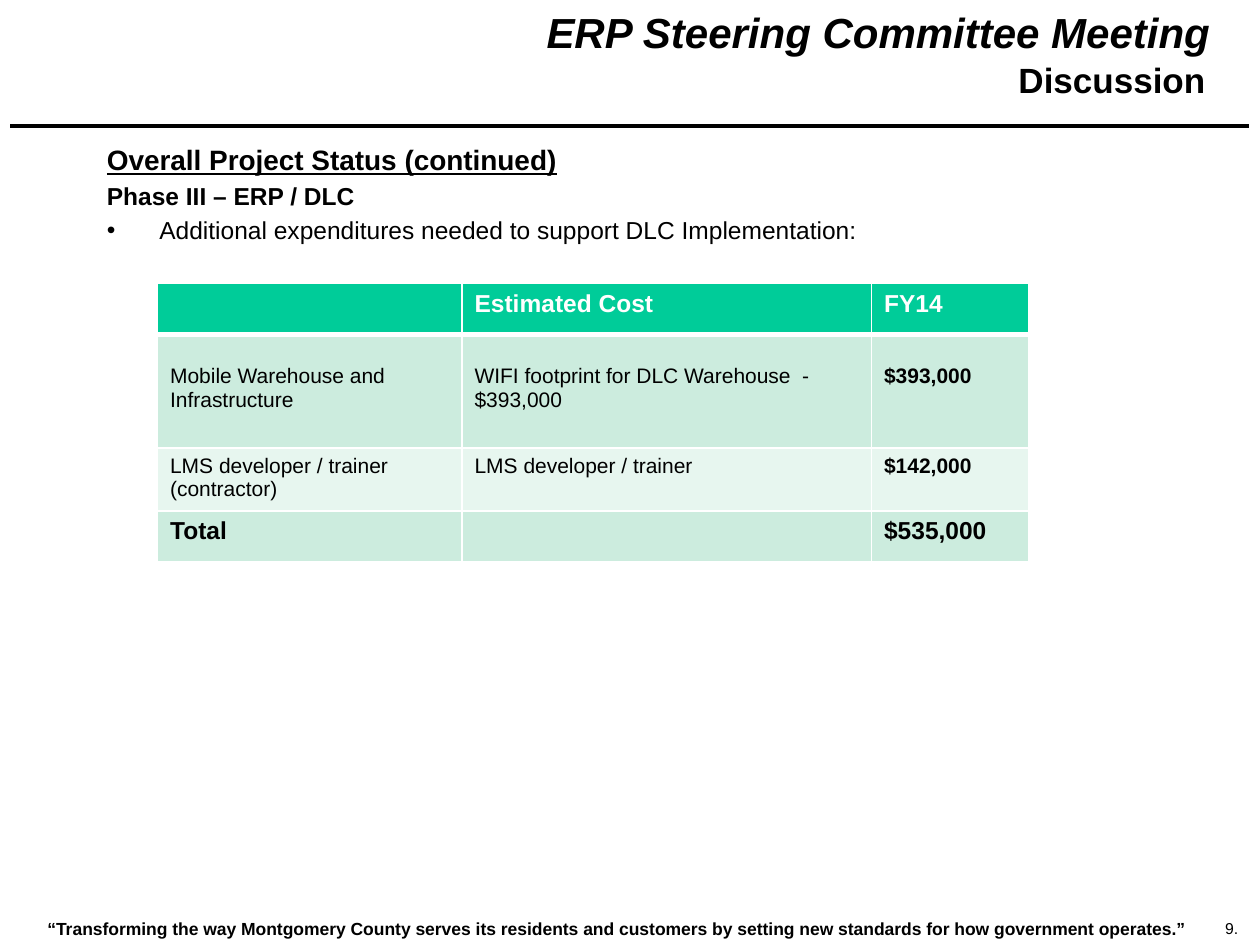
from dataclasses import dataclass

import pptx
import pptx.dml.color
import pptx.enum.shapes
import pptx.enum.text
import pptx.oxml
import pptx.oxml.ns
import pptx.util
from lxml import etree

Pt = pptx.util.Pt
RGBColor = pptx.dml.color.RGBColor
Align = pptx.enum.text.PP_ALIGN
qn = pptx.oxml.ns.qn

BLACK = RGBColor(0x00, 0x00, 0x00)
WHITE = RGBColor(0xFF, 0xFF, 0xFF)
GREEN = RGBColor(0x00, 0xCC, 0x99)
MINT = RGBColor(0xCC, 0xEC, 0xDE)
PALE_MINT = RGBColor(0xE7, 0xF6, 0xEF)
FONT = "Arial"
INDENT = 30


@dataclass
class Line:
    text: str
    size: float
    bold: bool = False
    italic: bool = False
    underline: bool = False
    bullet: bool = False
    color: RGBColor = BLACK


@dataclass
class Box:
    left: float
    top: float
    width: float
    height: float
    lines: list[Line]
    align: Align = Align.LEFT
    wrap: bool = True
    hanging: bool = False


@dataclass
class Row:
    height: float
    fill: RGBColor
    cells: list[Line]
    margin_top: float = 3.6
    border_bottom: float = 1


def add_line_text(paragraph, line: Line) -> None:
    run = paragraph.add_run()
    run.text = line.text
    font = run.font
    font.name, font.size = FONT, Pt(line.size)
    font.bold, font.italic, font.underline = line.bold, line.italic, line.underline
    font.color.rgb = line.color


def add_box(slide, box: Box) -> None:
    shape = slide.shapes.add_textbox(Pt(box.left), Pt(box.top), Pt(box.width), Pt(box.height))
    frame = shape.text_frame
    frame.word_wrap = box.wrap
    for index, line in enumerate(box.lines):
        paragraph = frame.paragraphs[0] if index == 0 else frame.add_paragraph()
        paragraph.alignment = box.align
        if index:
            paragraph.space_before = Pt(2.8)
        if box.hanging:
            properties = paragraph._p.get_or_add_pPr()
            properties.set("marL", str(Pt(INDENT)))
            properties.set("indent", str(-Pt(INDENT)))
            if line.bullet:
                etree.SubElement(properties, qn("a:buFont")).set("typeface", FONT)
                etree.SubElement(properties, qn("a:buChar")).set("char", "•")
        add_line_text(paragraph, line)


def add_rule(slide, left: float, right: float, y: float) -> None:
    connector = slide.shapes.add_connector(
        pptx.enum.shapes.MSO_CONNECTOR.STRAIGHT, Pt(left), Pt(y), Pt(right), Pt(y))
    connector.line.color.rgb = BLACK
    connector.line.width = Pt(2)
    etree.SubElement(connector._element.spPr, qn("a:effectLst"))


def set_borders(cell, top: float, bottom: float) -> None:
    properties = cell._tc.get_or_add_tcPr()
    widths = {"lnL": 1, "lnR": 1, "lnT": top, "lnB": bottom}
    for position, (side, width) in enumerate(widths.items()):
        border = etree.Element(qn(f"a:{side}"), w=str(Pt(width)))
        fill = etree.SubElement(border, qn("a:solidFill"))
        etree.SubElement(fill, qn("a:srgbClr")).set("val", str(WHITE))
        properties.insert(position, border)


def add_cost_table(slide, left: float, top: float, widths: list[float], rows: list[Row]) -> None:
    table = slide.shapes.add_table(
        len(rows), len(widths), Pt(left), Pt(top),
        Pt(sum(widths)), Pt(sum(row.height for row in rows))).table
    table.first_row = table.horz_banding = False
    for column, width in zip(table.columns, widths):
        column.width = Pt(width)
    border_top = 1
    for row_index, row in enumerate(rows):
        table.rows[row_index].height = Pt(row.height)
        for column_index, line in enumerate(row.cells):
            cell = table.cell(row_index, column_index)
            cell.fill.solid()
            cell.fill.fore_color.rgb = row.fill
            cell.margin_top = Pt(row.margin_top)
            set_borders(cell, border_top, row.border_bottom)
            if line.text:
                add_line_text(cell.text_frame.paragraphs[0], line)
        border_top = row.border_bottom


EMPTY = Line("", 14)

BOXES = [
    # Title and subtitle
    Box(204, 0, 494.5, 36, [Line("ERP Steering Committee Meeting", 24, bold=True, italic=True)],
        Align.RIGHT),
    Box(90, 30, 606, 31, [Line("Discussion", 20, bold=True)], Align.RIGHT),
    # Status text
    Box(54, 78, 642, 432, [
        Line("Overall Project Status (continued)", 16, bold=True, underline=True),
        Line("Phase III – ERP / DLC", 14, bold=True),
        Line("Additional expenditures needed to support DLC Implementation:", 14, bullet=True),
    ], hanging=True),
    # Footer and page number
    Box(20, 521, 720, 19.5, [Line(
        "“Transforming the way Montgomery County serves its residents and customers "
        "by setting new standards for how government operates.”", 10, bold=True)]),
    Box(693, 521.5, 28, 18, [Line("9.", 9)], wrap=False),
]

COST_ROWS = [
    Row(29, GREEN, [EMPTY, Line("Estimated Cost", 14, bold=True, color=WHITE),
                    Line("FY14", 14, bold=True, color=WHITE)], border_bottom=3),
    Row(65, MINT, [Line("Mobile Warehouse and Infrastructure", 12),
                   Line("WIFI footprint for DLC Warehouse  - $393,000", 12),
                   Line("$393,000", 12, bold=True)], margin_top=17.4),
    Row(36, PALE_MINT, [Line("LMS developer / trainer (contractor)", 12),
                        Line("LMS developer / trainer", 12),
                        Line("$142,000", 12, bold=True)]),
    Row(29, MINT, [Line("Total", 14, bold=True), EMPTY, Line("$535,000", 14, bold=True)]),
]


def main() -> None:
    presentation = pptx.Presentation()
    presentation.slide_width, presentation.slide_height = Pt(720), Pt(540)
    slide = presentation.slides.add_slide(presentation.slide_layouts[6])
    add_rule(slide, 6, 714, 72)
    for box in BOXES:
        add_box(slide, box)
    add_cost_table(slide, 90, 162, [174, 234, 90], COST_ROWS)
    presentation.save("out.pptx")


if __name__ == "__main__":
    main()
